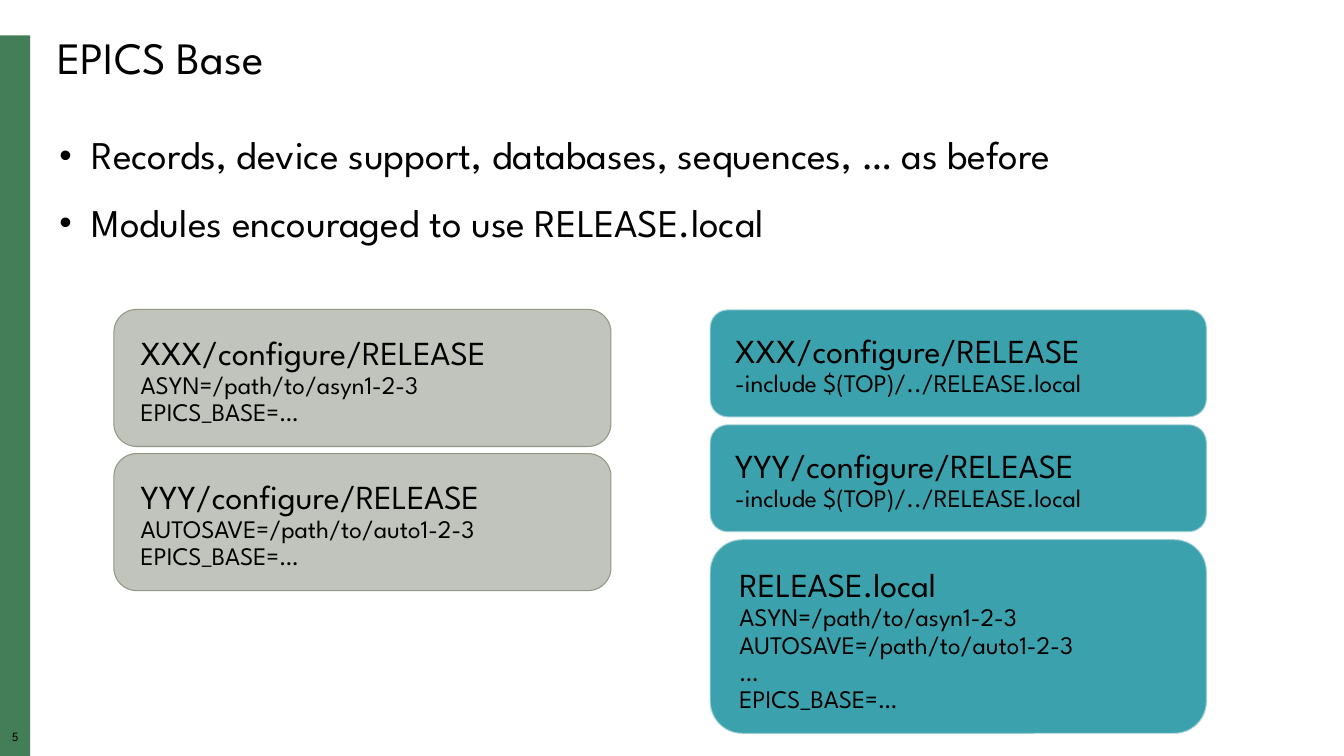
from dataclasses import dataclass

from lxml import etree
from pptx import Presentation, util as u
from pptx.dml.color import RGBColor
from pptx.enum import shapes, text
from pptx.oxml.ns import qn


@dataclass(frozen=True)
class Theme:
    font: str = "League Spartan"
    ink: str = "000000"
    band: str = "447E59"
    title: int = 32
    body: int = 28
    heading: int = 24
    detail: int = 18
    number: int = 9
    leading: float = 0.9


@dataclass(frozen=True)
class CardStyle:
    fill: str
    line: str
    weight: float
    opacity: int = 100


THEME = Theme()
BEFORE = CardStyle("C1C4BC", "919785", 0.75)
AFTER = CardStyle("3BA2AD", "F9F9F9", 1.35, 50)

# Grid: 75 rows, and columns as wide as the rows are high
WIDTH, HEIGHT = u.Inches(13.33), u.Inches(7.5)
CELL = HEIGHT / 75
CARD_GAP = 0.7
CARD_INSET = 2

BULLETS = [
    "Records, device support, databases, sequences, … as before",
    "Modules encouraged to use RELEASE.local",
]
# Each card: height in rows, heading, detail lines
BEFORE_CARDS = [
    (13.6, "XXX/configure/RELEASE", ["ASYN=/path/to/asyn1-2-3", "EPICS_BASE=…"]),
    (13.6, "YYY/configure/RELEASE", ["AUTOSAVE=/path/to/auto1-2-3", "EPICS_BASE=…"]),
]
AFTER_CARDS = [
    (10.7, "XXX/configure/RELEASE", ["-include $(TOP)/../RELEASE.local"]),
    (10.7, "YYY/configure/RELEASE", ["-include $(TOP)/../RELEASE.local"]),
    (19.3, "RELEASE.local", ["ASYN=/path/to/asyn1-2-3", "AUTOSAVE=/path/to/auto1-2-3",
                             "…", "EPICS_BASE=…"]),
]


def cells(*counts):
    return [u.Emu(round(n * CELL)) for n in counts]


def set_inset(tf, inset):
    margin, = cells(inset)
    tf.margin_left = tf.margin_right = tf.margin_top = tf.margin_bottom = margin


def write(p, content, size):
    p.text = content
    p.line_spacing = THEME.leading
    for r in p.runs:
        r.font.name = THEME.font
        r.font.size = u.Pt(size)
        r.font.color.rgb = RGBColor.from_string(THEME.ink)


def add_text(s, box, content, size, anchor=text.MSO_ANCHOR.TOP):
    tf = s.shapes.add_textbox(*cells(*box)).text_frame
    tf.word_wrap = True
    tf.vertical_anchor = anchor
    write(tf.paragraphs[0], content, size)
    return tf


def add_panel(s, kind, box, fill):
    sp = s.shapes.add_shape(kind, *cells(*box))
    sp.shadow.inherit = False
    sp.fill.solid()
    sp.fill.fore_color.rgb = RGBColor.from_string(fill)
    return sp


def add_bullet(p):
    pPr = p._p.get_or_add_pPr()
    indent, = cells(3.2)
    pPr.set("marL", str(indent))
    pPr.set("indent", str(-indent))
    color = etree.SubElement(pPr, qn("a:buClr"))
    etree.SubElement(color, qn("a:srgbClr"), val=THEME.ink)
    etree.SubElement(pPr, qn("a:buSzPct"), val="90000")
    etree.SubElement(pPr, qn("a:buFont"), typeface="Arial")
    etree.SubElement(pPr, qn("a:buChar"), char="•")


def side_band(s, box, number):
    left, top, width, height = box
    band = add_panel(s, shapes.MSO_SHAPE.RECTANGLE, box, THEME.band)
    band.line.fill.background()
    tf = add_text(s, (left, top + height - 2.5, width, 1.7), number, THEME.number)
    set_inset(tf, 0)
    tf.paragraphs[0].alignment = text.PP_ALIGN.CENTER


def bullet_list(s, box, items):
    tf = add_text(s, box, items[0], THEME.body)
    for item in items[1:]:
        p = tf.add_paragraph()
        write(p, item, THEME.body)
        p.space_before = u.Pt(18)
    for p in tf.paragraphs:
        add_bullet(p)


def card(s, box, heading, details, style):
    sp = add_panel(s, shapes.MSO_SHAPE.ROUNDED_RECTANGLE, box, style.fill)
    sp.line.color.rgb = RGBColor.from_string(style.line)
    sp.line.width = u.Pt(style.weight)
    if style.opacity < 100:
        color = sp.line._ln.find(".//" + qn("a:srgbClr"))
        etree.SubElement(color, qn("a:alpha"), val=str(style.opacity * 1000))
    tf = sp.text_frame
    tf.word_wrap = True
    tf.vertical_anchor = text.MSO_ANCHOR.TOP
    set_inset(tf, CARD_INSET)
    write(tf.paragraphs[0], heading, THEME.heading)
    write(tf.add_paragraph(), "\v".join(details), THEME.detail)
    for p in tf.paragraphs:
        p.alignment = text.PP_ALIGN.LEFT


def card_stack(s, left, top, width, cards, style):
    for height, heading, details in cards:
        card(s, (left, top, width, height), heading, details, style)
        top += height + CARD_GAP


def main():
    prs = Presentation()
    prs.slide_width, prs.slide_height = WIDTH, HEIGHT
    s = prs.slides.add_slide(prs.slide_layouts[6])

    # Side band with page number
    side_band(s, (0, 3.5, 3, 71.5), "5")

    # Title and bullets
    add_text(s, (4.7, 3, 125, 5.9), "EPICS Base", THEME.title, text.MSO_ANCHOR.MIDDLE)
    bullet_list(s, (4.9, 13, 125, 16.9), BULLETS)

    # Release files: one per module, then with a shared local file
    card_stack(s, 11.3, 30.7, 49.3, BEFORE_CARDS, BEFORE)
    card_stack(s, 70.4, 30.7, 49.3, AFTER_CARDS, AFTER)

    prs.save("out.pptx")


if __name__ == "__main__":
    main()
